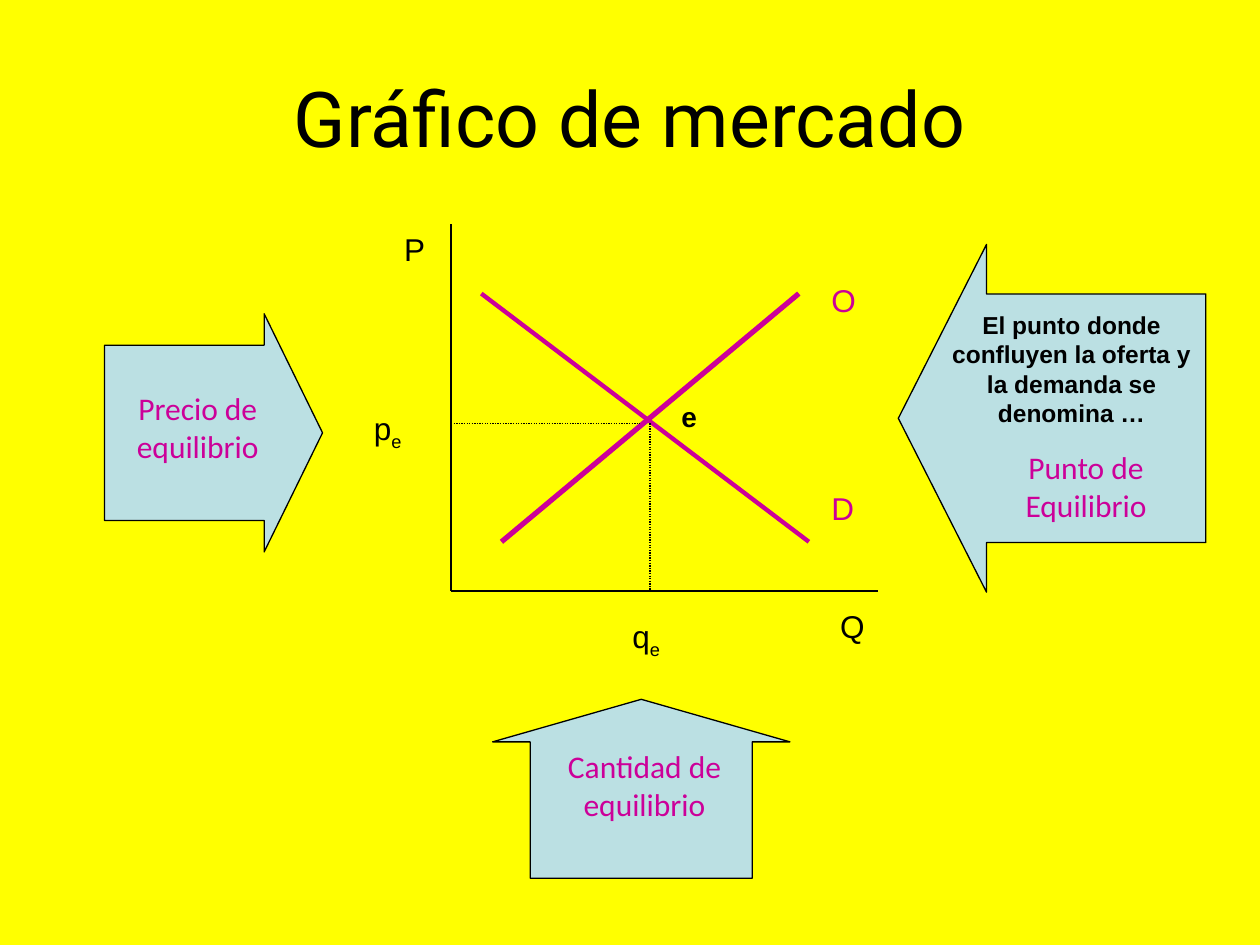
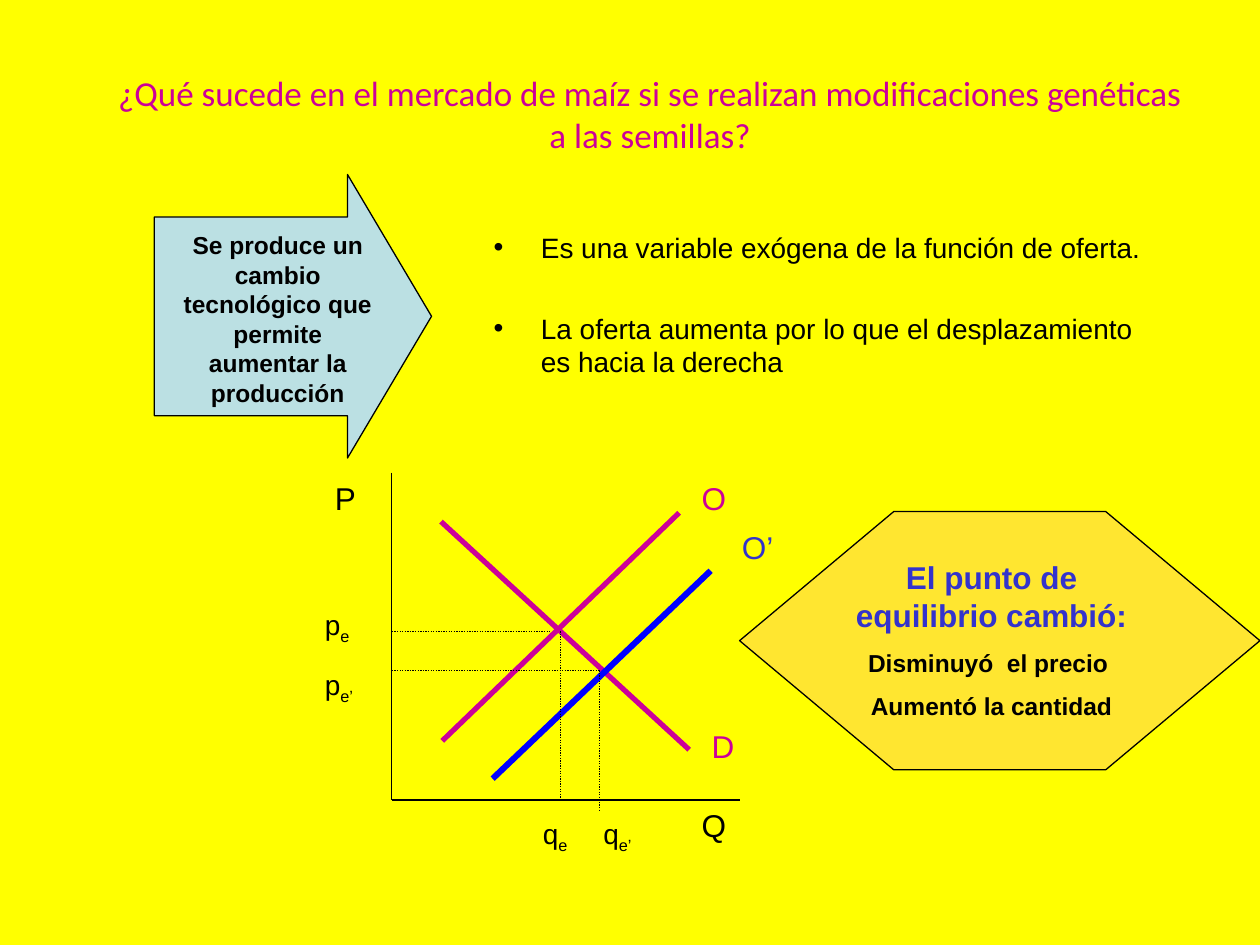
from dataclasses import dataclass

from lxml.etree import SubElement
from pptx import Presentation
from pptx.dml.color import RGBColor
from pptx.enum.dml import MSO_LINE
from pptx.enum.shapes import MSO_CONNECTOR, MSO_SHAPE as Preset
from pptx.enum.text import MSO_ANCHOR as Anchor, PP_ALIGN as Align
from pptx.oxml.ns import qn
from pptx.util import Inches, Length, Pt

WIDTH, HEIGHT = Inches(10), Inches(7.5)
COLS, ROWS = 100, 75

YELLOW, BLACK, MAGENTA = "FFFF00", "000000", "CC0099"
PALE_BLUE, PINK, BLUE, INDIGO = "BBE0E3", "FF99CC", "0000FF", "3333CC"
ARIAL, CALIBRI, ROBOTO = "Arial", "Calibri", "Roboto"

Box = tuple[float, float, float, float]
Point = tuple[float, float]


@dataclass(frozen=True)
class Style:
    size: float = 18
    color: str = BLACK
    font: str = ARIAL
    bold: bool = False


AXIS_NAME = Style()
CURVE_NAME = Style(color=MAGENTA)
SMALL_NAME = Style(16)
CALLOUT = Style(color=MAGENTA, font=CALIBRI)
REMARK = Style(14, bold=True)


@dataclass(frozen=True)
class Para:
    text: str
    style: Style
    before: float = 0
    bullet: bool = False


@dataclass(frozen=True)
class Note:
    box: Box
    paras: list[Para]
    align: Align = Align.CENTER
    anchor: Anchor = Anchor.TOP


@dataclass(frozen=True)
class Label:
    text: str
    col: float
    row: float
    cols: float
    style: Style = AXIS_NAME


@dataclass(frozen=True)
class Curve:
    start: Point
    end: Point
    color: str = MAGENTA
    weight: float = 3


@dataclass(frozen=True)
class Equilibrium:
    col: float
    row: float
    reach: float
    foot: float


@dataclass(frozen=True)
class Market:
    top: float
    origin: Point
    right: float
    curves: list[Curve]
    equilibria: list[Equilibrium]
    labels: list[Label]


@dataclass(frozen=True)
class Figure:
    preset: Preset
    box: Box
    adjust: tuple[float, ...]
    turn: float = 0
    fill: str = PALE_BLUE
    opacity: int = 100


def rgb(color: str) -> RGBColor:
    return RGBColor.from_string(color)


def x(cols: float) -> Length:
    return Length(round(WIDTH * cols / COLS))


def y(rows: float) -> Length:
    return Length(round(HEIGHT * rows / ROWS))


def place(box: Box) -> tuple[Length, ...]:
    col, row, cols, rows = box
    return x(col), y(row), x(cols), y(rows)


def add_run(p, text: str, style: Style, subscript: bool = False) -> None:
    r = p.add_run()
    r.text = text
    r.font.size, r.font.name, r.font.bold = Pt(style.size), style.font, style.bold
    r.font.color.rgb = rgb(style.color)
    if subscript:
        r.font._element.set("baseline", "-25000")


def add_bullet(p) -> None:
    pPr = p._p.get_or_add_pPr()
    indent = x(3.75)
    pPr.set("marL", str(indent))
    pPr.set("indent", str(-indent))
    SubElement(pPr, qn("a:buFont")).set("typeface", ARIAL)
    SubElement(pPr, qn("a:buChar")).set("char", "•")


def draw_note(s, note: Note) -> None:
    tf = s.shapes.add_textbox(*place(note.box)).text_frame
    tf.word_wrap = True
    tf.vertical_anchor = note.anchor
    for i, para in enumerate(note.paras):
        p = tf.add_paragraph() if i else tf.paragraphs[0]
        p.alignment = note.align
        p.space_before = Pt(para.before)
        if para.bullet:
            add_bullet(p)
        base, _, sub = para.text.partition("_")
        add_run(p, base, para.style)
        if sub:
            add_run(p, sub, para.style, subscript=True)


def draw_label(s, label: Label) -> None:
    rows = 4 if label.style.size == 18 else 3.7
    box = (label.col, label.row, label.cols, rows)
    draw_note(s, Note(box, [Para(label.text, label.style)], Align.LEFT))


def draw_line(s, start: Point, end: Point, color: str = BLACK,
              weight: float = 0.75, dotted: bool = False) -> None:
    ends = x(start[0]), y(start[1]), x(end[0]), y(end[1])
    c = s.shapes.add_connector(MSO_CONNECTOR.STRAIGHT, *ends)
    c.line.color.rgb = rgb(color)
    c.line.width = Pt(weight)
    if dotted:
        c.line.dash_style = MSO_LINE.ROUND_DOT
    SubElement(c._element.spPr, qn("a:effectLst"))


def draw_market(s, m: Market) -> None:
    axis, base = m.origin
    draw_line(s, (axis, m.top), m.origin)
    draw_line(s, m.origin, (m.right, base))
    for curve in m.curves:
        draw_line(s, curve.start, curve.end, curve.color, curve.weight)
    for e in m.equilibria:
        draw_line(s, (axis, e.row), (e.reach, e.row), dotted=True)
        draw_line(s, (e.col, e.row), (e.col, e.foot), dotted=True)
    for label in m.labels:
        draw_label(s, label)


def draw_figure(s, figure: Figure) -> None:
    sp = s.shapes.add_shape(figure.preset, *place(figure.box))
    sp.shadow.inherit = False
    sp.rotation = figure.turn
    for i, value in enumerate(figure.adjust):
        sp.adjustments[i] = value
    sp.fill.solid()
    sp.fill.fore_color.rgb = rgb(figure.fill)
    if figure.opacity < 100:
        color = sp._element.spPr.find(qn("a:solidFill"))[0]
        SubElement(color, qn("a:alpha")).set("val", str(figure.opacity * 1000))
    sp.line.color.rgb = rgb(BLACK)
    sp.line.width = Pt(0.75)


def build_slide(prs, market: Market, figures: list[Figure], notes: list[Note]) -> None:
    s = prs.slides.add_slide(prs.slide_layouts[6])
    s.background.fill.solid()
    s.background.fill.fore_color.rgb = rgb(YELLOW)
    draw_market(s, market)
    for figure in figures:
        draw_figure(s, figure)
    for note in notes:
        draw_note(s, note)


EQUILIBRIUM_MARKET = Market(
    top=17.8, origin=(35.8, 46.9), right=69.7,
    curves=[
        Curve((39.8, 43), (63.4, 23.3)),
        Curve((38.2, 23.3), (64.2, 43), weight=2.5),
    ],
    equilibria=[Equilibrium(51.6, 33.6, reach=50.8, foot=46.9)],
    labels=[
        Label("P", 31.1, 17.8, 3.9),
        Label("Q", 65.7, 47.7, 4.7),
        Label("O", 65, 21.8, 5.5, CURVE_NAME),
        Label("D", 65, 38.3, 3.9, CURVE_NAME),
        Label("p_e", 28.7, 32, 4.7),
        Label("q_e", 49.2, 48.5, 6.3),
        Label("e", 53.1, 31.2, 3.9, Style(16, bold=True)),
    ],
)

SHIFTED_MARKET = Market(
    top=37.5, origin=(31.1, 63.5), right=58.7,
    curves=[
        Curve((35, 41.4), (54.7, 59.5)),
        Curve((35.1, 58.8), (53.9, 40.7)),
        Curve((56.4, 45.3), (39.1, 61.8), BLUE, 3.5),
    ],
    equilibria=[
        Equilibrium(44.5, 50.1, reach=43.7, foot=63.5),
        Equilibrium(47.6, 53.2, reach=47.6, foot=64.3),
    ],
    labels=[
        Label("P", 25.6, 37.5, 3.9),
        Label("Q", 54.7, 63.5, 6.3),
        Label("D", 55.5, 57.2, 3.9, CURVE_NAME),
        Label("O", 54.7, 37.5, 4.7, CURVE_NAME),
        Label("O’", 57.9, 41.4, 5.5, Style(color=INDIGO)),
        Label("p_e", 24.8, 47.7, 4.7, SMALL_NAME),
        Label("p_e’", 24.8, 52.5, 4.7, SMALL_NAME),
        Label("q_e", 42.1, 64.3, 6.3, SMALL_NAME),
        Label("q_e’", 46.9, 64.3, 4.7, SMALL_NAME),
    ],
)


def main() -> None:
    prs = Presentation()
    prs.slide_width, prs.slide_height = WIDTH, HEIGHT

    build_slide(prs, EQUILIBRIUM_MARKET, [
        Figure(Preset.UP_ARROW, (7.5, 25.7, 18.9, 17.3), (0.736, 0.268), turn=90),
        Figure(Preset.UP_ARROW, (39.1, 55.5, 23.6, 14.2), (0.747, 0.238)),
        Figure(Preset.LEFT_ARROW, (71.3, 19.4, 24.4, 27.6), (0.715, 0.287)),
    ], [
        Note((5, 3, 90, 12.5),
             [Para("Gráfico de mercado", Style(44, font=ROBOTO))], anchor=Anchor.MIDDLE),
        Note((43.7, 58.8, 14.9, 7), [Para("Cantidad de equilibrio", CALLOUT)]),
        Note((9, 30.4, 13.4, 7), [Para("Precio de equilibrio", CALLOUT)]),
        Note((74.4, 24.1, 21.3, 10.3), [Para(
            "El punto donde confluyen la oferta y la demanda se denomina …", REMARK)]),
        Note((79.1, 35.1, 14.2, 7), [Para("Punto de Equilibrio", CALLOUT)]),
    ])

    build_slide(prs, SHIFTED_MARKET, [
        Figure(Preset.DOWN_ARROW, (12, 14.1, 22.5, 22), (0.701, 0.303), turn=270),
        Figure(Preset.HEXAGON, (58.7, 40.6, 41.3, 20.5), (0.597,), fill=PINK, opacity=24),
    ], [
        Note((8.3, 5.2, 86.6, 7.7), [Para(
            "¿Qué sucede en el mercado de maíz si se realizan modificaciones "
            "genéticas a las semillas?", Style(20, MAGENTA, CALIBRI))]),
        Note((13, 17.8, 18.1, 15), [Para(
            "Se produce un cambio tecnológico que permite aumentar la producción", REMARK)]),
        Note((38.2, 17.8, 54.4, 18.9), [
            Para("Es una variable exógena de la función de oferta.", SMALL_NAME, bullet=True),
            Para("La oferta aumenta por lo que el desplazamiento es hacia la derecha",
                 SMALL_NAME, before=27, bullet=True),
        ], Align.LEFT),
        Note((65.7, 43.8, 26, 14), [
            Para("El punto de equilibrio cambió:", Style(color=INDIGO, bold=True)),
            Para("Disminuyó  el precio ", REMARK, before=8),
            Para("Aumentó la cantidad", REMARK, before=8),
        ]),
    ])

    prs.save("out.pptx")


if __name__ == "__main__":
    main()
